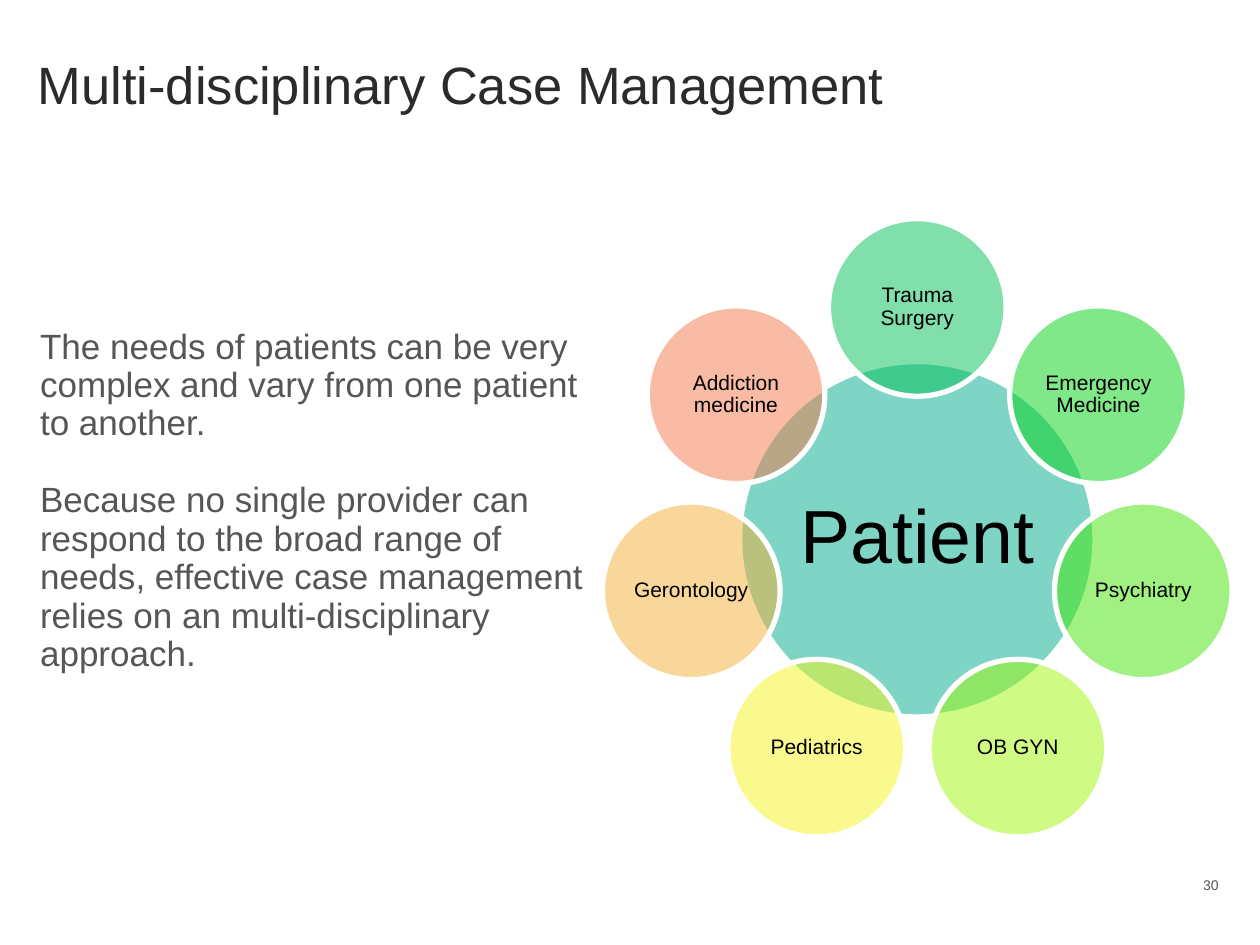
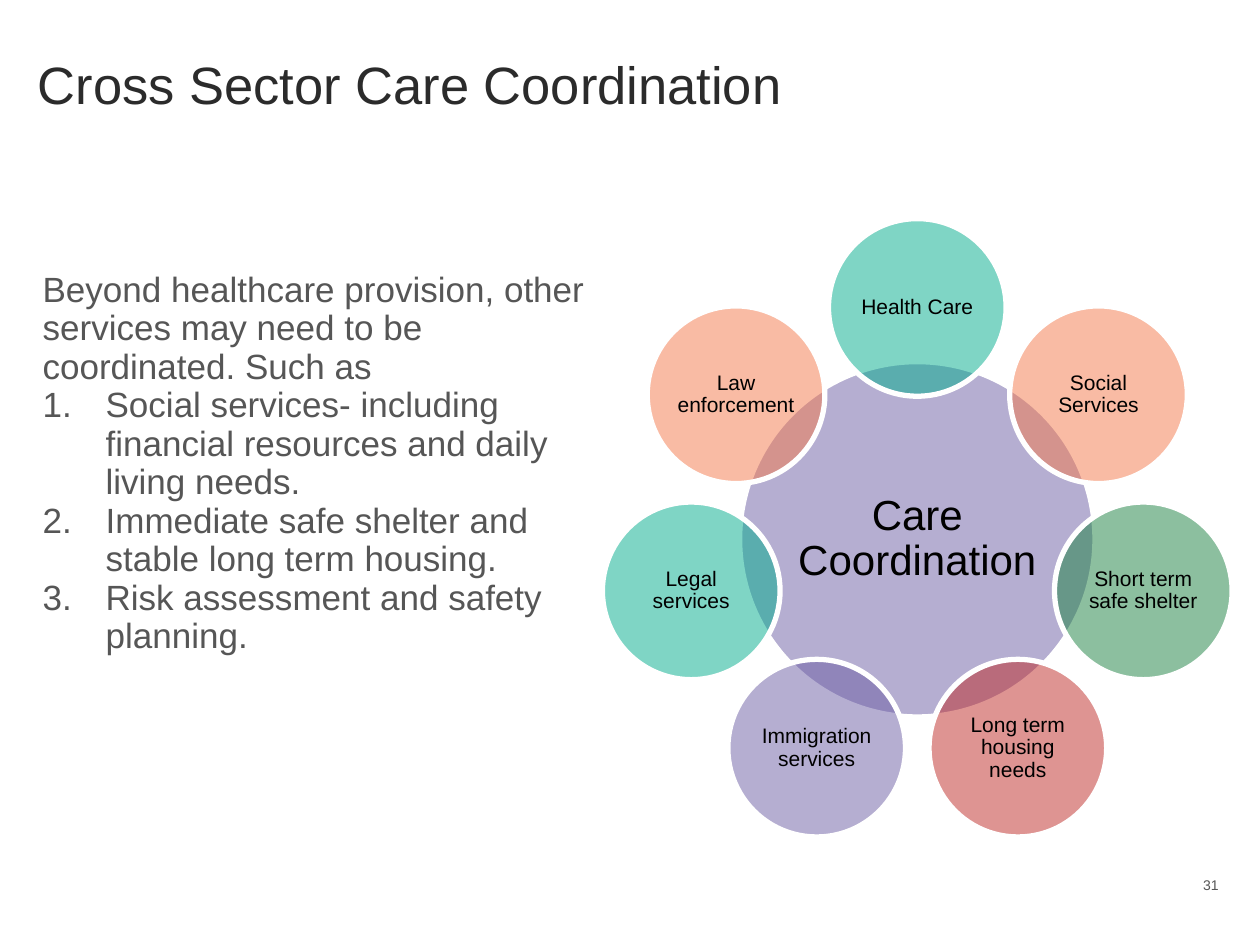
from dataclasses import dataclass
from math import cos, pi, sin

from lxml import etree
from pptx import Presentation
from pptx import util as u
from pptx.dml.color import RGBColor
from pptx.enum import shapes, text
from pptx.oxml.ns import qn

PX = 9144  # EMU per px, 100 px to the inch
FONT = "Arial"
COLORS = {
    "title": "2B2B2B", "body": "565656", "label": "000000", "white": "FFFFFF",
    "teal": "00AD8D", "emerald": "02C058", "green": "04D316", "lime": "43E506",
    "chartreuse": "A0F709", "yellow": "F5F51F", "amber": "F5AF35",
    "orange": "F4794A", "purple": "6C5EA5", "forest": "1B8140", "red": "BE2A26",
}

# Wheel geometry in px
CENTER_X, CENTER_Y = 728, 428
HUB_SIZE, SPOKE_SIZE, ORBIT = 282, 141, 184


@dataclass
class Style:
    size: int
    color: str
    align: text.PP_ALIGN = text.PP_ALIGN.LEFT
    anchor: text.MSO_ANCHOR = text.MSO_ANCHOR.MIDDLE
    inset_x: int = 10
    inset_y: int = 5
    line_spacing: float | u.Pt = 1.0


@dataclass
class Para:
    text: str
    before: int = 0
    numbered: bool = False


@dataclass
class Circle:
    label: str
    color: str


@dataclass
class WheelSlide:
    title: str
    body_at: tuple[int, int]
    body: list[Para]
    hub: Circle
    hub_size: int
    spokes: list[Circle]
    number: int


CENTERED = text.PP_ALIGN.CENTER
TITLE = Style(30, "title", inset_x=8, inset_y=0)
BODY = Style(20, "body", anchor=text.MSO_ANCHOR.TOP, line_spacing=u.Pt(22))
SPOKE = Style(12, "label", CENTERED, inset_x=2, inset_y=2, line_spacing=0.9)
NUMBER = Style(8, "body", text.PP_ALIGN.RIGHT)

SLIDES = [
    WheelSlide(
        "Multi-disciplinary Case Management",
        (22, 255),
        [
            Para("The needs of patients can be very complex and vary from one patient to another."),
            Para("Because no single provider can respond to the broad range of needs, effective "
                 "case management relies on an multi-disciplinary approach.", before=22),
        ],
        Circle("Patient", "teal"), 43,
        [
            Circle("Trauma Surgery", "emerald"),
            Circle("Emergency Medicine", "green"),
            Circle("Psychiatry", "lime"),
            Circle("OB GYN", "chartreuse"),
            Circle("Pediatrics", "yellow"),
            Circle("Gerontology", "amber"),
            Circle("Addiction medicine", "orange"),
        ],
        30,
    ),
    WheelSlide(
        "Cross Sector Care Coordination",
        (24, 210),
        [
            Para("Beyond healthcare provision, other services may need to be coordinated. Such as"),
            Para("Social services- including financial resources and daily living needs.", numbered=True),
            Para("Immediate safe shelter and stable long term housing.", numbered=True),
            Para("Risk assessment and safety planning.", numbered=True),
        ],
        Circle("Care Coordination", "purple"), 24,
        [
            Circle("Health Care", "teal"),
            Circle("Social Services", "orange"),
            Circle("Short term safe shelter", "forest"),
            Circle("Long term housing needs", "red"),
            Circle("Immigration services", "purple"),
            Circle("Legal services", "teal"),
            Circle("Law enforcement", "orange"),
        ],
        31,
    ),
]


def rgb(name: str) -> RGBColor:
    return RGBColor.from_string(COLORS[name])


def px(*lengths: float) -> list[int]:
    return [round(n * PX) for n in lengths]


def write(sp, paras: list[Para], style: Style) -> None:
    """Fill a shape or text box with styled paragraphs."""
    tf = sp.text_frame
    tf.word_wrap = True
    tf.vertical_anchor = style.anchor
    tf.margin_left = tf.margin_right = px(style.inset_x)[0]
    tf.margin_top = tf.margin_bottom = px(style.inset_y)[0]
    for i, para in enumerate(paras):
        p = tf.add_paragraph() if i else tf.paragraphs[0]
        p.alignment = style.align
        p.line_spacing = style.line_spacing
        p.space_before = u.Pt(para.before)
        if para.numbered:
            number_paragraph(p)
        r = p.add_run()
        r.text = para.text
        r.font.name, r.font.size = FONT, u.Pt(style.size)
        r.font.color.rgb = rgb(style.color)


def number_paragraph(p) -> None:
    """Give a paragraph a hanging automatic number."""
    pr = p._p.get_or_add_pPr()
    indent = px(50)[0]
    pr.set("marL", str(indent))
    pr.set("indent", str(-indent))
    etree.SubElement(pr, qn("a:buFont"), typeface="+mj-lt")
    etree.SubElement(pr, qn("a:buAutoNum"), type="arabicPeriod")


def add_text(s, box: tuple[int, int, int, int], paras: list[Para], style: Style) -> None:
    write(s.shapes.add_textbox(*px(*box)), paras, style)


def add_circle(s, x: float, y: float, size: int, circle: Circle, style: Style) -> None:
    """Draw a half-transparent labelled circle centred on x, y."""
    sp = s.shapes.add_shape(shapes.MSO_SHAPE.OVAL,
                            *px(x - size / 2, y - size / 2, size, size))
    sp.shadow.inherit = False
    sp.fill.solid()
    sp.fill.fore_color.rgb = rgb(circle.color)
    color = sp._element.spPr.find(qn("a:solidFill")).find(qn("a:srgbClr"))
    etree.SubElement(color, qn("a:alpha"), val="50000")
    sp.line.color.rgb = rgb("white")
    sp.line.width = u.Pt(3)
    write(sp, [Para(circle.label)], style)


def add_wheel(s, slide: WheelSlide) -> None:
    """Draw the hub, then the spokes clockwise from the top."""
    hub = Style(slide.hub_size, "label", CENTERED, inset_x=3, inset_y=3, line_spacing=0.9)
    add_circle(s, CENTER_X, CENTER_Y, HUB_SIZE, slide.hub, hub)
    for i, spoke in enumerate(slide.spokes):
        angle = 2 * pi * i / len(slide.spokes)
        add_circle(s, CENTER_X + ORBIT * sin(angle), CENTER_Y - ORBIT * cos(angle),
                   SPOKE_SIZE, spoke, SPOKE)


def main() -> None:
    prs = Presentation()
    prs.slide_width, prs.slide_height = px(1000, 750)
    for slide in SLIDES:
        s = prs.slides.add_slide(prs.slide_layouts[6])
        add_text(s, (22, 16, 942, 100), [Para(slide.title)], TITLE)
        add_text(s, (*slide.body_at, 470, 312), slide.body, BODY)
        add_wheel(s, slide)
        add_text(s, (907, 682, 70, 40), [Para(str(slide.number))], NUMBER)
    prs.save("out.pptx")


if __name__ == "__main__":
    main()
